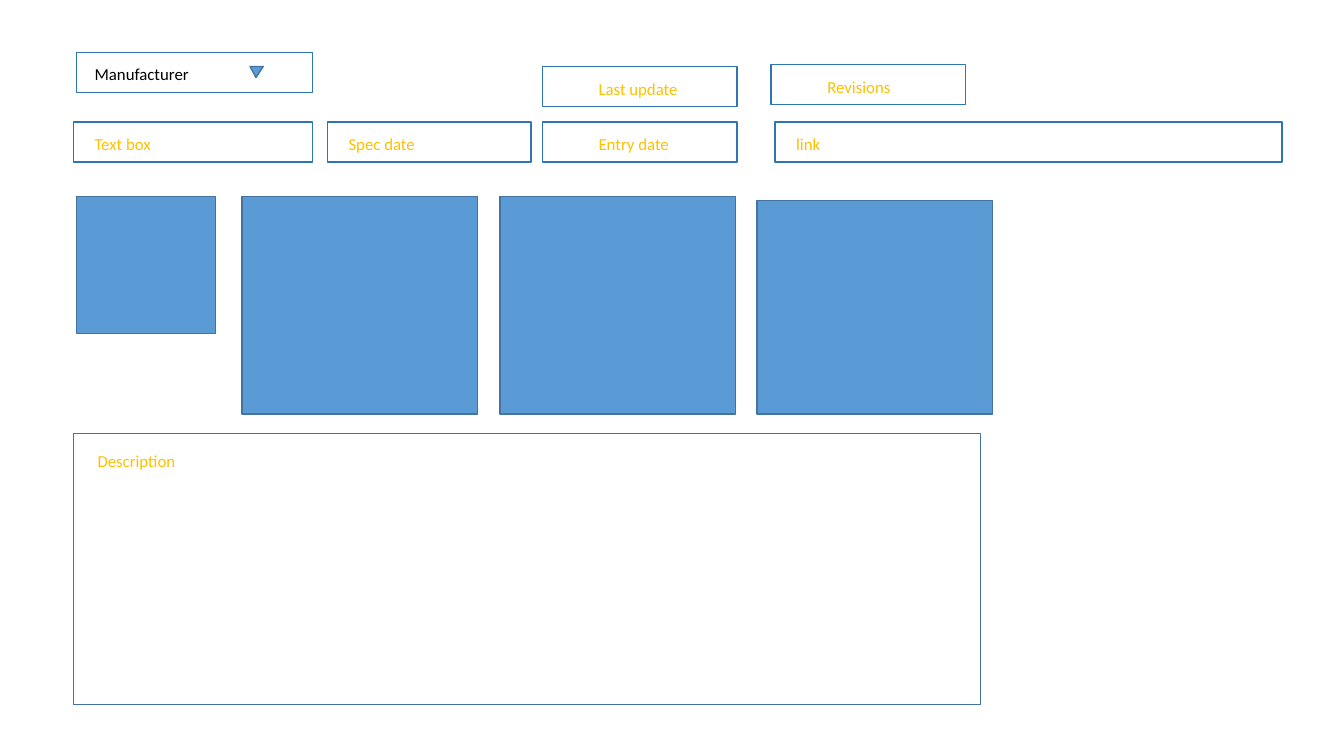
"""Build the wireframe slide of a product specification form."""
from pptx import Presentation
from pptx.dml.color import RGBColor
from pptx.enum.shapes import MSO_SHAPE
from pptx.enum.text import MSO_AUTO_SIZE
from pptx.util import Pt

HUES = {"field": "2E75B6", "edge": "43739E", "tile": "5B9BD5",
        "hint": "FFC000", "ink": "000000"}

deck = Presentation()
deck.slide_width, deck.slide_height = Pt(960), Pt(540)
slide = deck.slides.add_slide(deck.slide_layouts[6])


def draw(left, top, width, height, line="edge", fill=None, kind=MSO_SHAPE.RECTANGLE):
    shape = slide.shapes.add_shape(kind, Pt(left), Pt(top), Pt(width), Pt(height))
    shape.shadow.inherit = False
    shape.line.color.rgb = RGBColor.from_string(HUES[line])
    shape.line.width = Pt(1)
    if fill:
        shape.fill.solid()
        shape.fill.fore_color.rgb = RGBColor.from_string(HUES[fill])
    else:
        shape.fill.background()
    return shape


def write(text, left, top, width, color="hint", wrap=False, size=12):
    box = slide.shapes.add_textbox(Pt(left), Pt(top), Pt(width), Pt(21.8))
    frame = box.text_frame
    frame.word_wrap = wrap
    frame.auto_size = MSO_AUTO_SIZE.SHAPE_TO_FIT_TEXT
    frame.text = text
    font = frame.paragraphs[0].font
    font.name, font.size = "Calibri", Pt(size)
    font.color.rgb = RGBColor.from_string(HUES[color])


fields = [
    ("Text box", 52.6, 87.1, 170.6, 55.4),
    ("Spec date", 234, 87.1, 145.4, 62.6),
    ("link", 553.7, 87.1, 362.2, 31.7),
]
for text, left, top, width, span in fields:
    draw(left, top, width, 28.8, line="field")
    write(text, left + 7.9, top + 5, span)

dates = [
    ("Entry date", 387.4, 87.1),
    ("Last update", 387.4, 47.5),
    ("Revisions", 550.8, 46.1),
]
for text, left, top in dates:
    draw(left, top, 139, 28.8, line="field")
    write(text, left + 33.1, top + 5, 84.2, wrap=True)

draw(54.7, 37.4, 168.5, 28.8, line="field")
write("Manufacturer", 60.5, 41.8, 82.1, color="ink")
arrow = draw(178.6, 47.5, 9.4, 7.9, fill="tile", kind=MSO_SHAPE.ISOSCELES_TRIANGLE)
arrow.adjustments[0] = 0.55
arrow.rotation = 180

tiles = [
    (54.7, 140.4, 99.4, 97.9),
    (172.8, 140.4, 168.5, 155.5),
    (357.1, 140.4, 168.5, 155.5),
    (540.7, 143.3, 168.5, 152.6),
]
for place in tiles:
    draw(*place, fill="tile")

draw(52.6, 309.6, 648, 193.7)
write("Description", 62.6, 318.2, 84.2, wrap=True)

deck.save("out.pptx")
